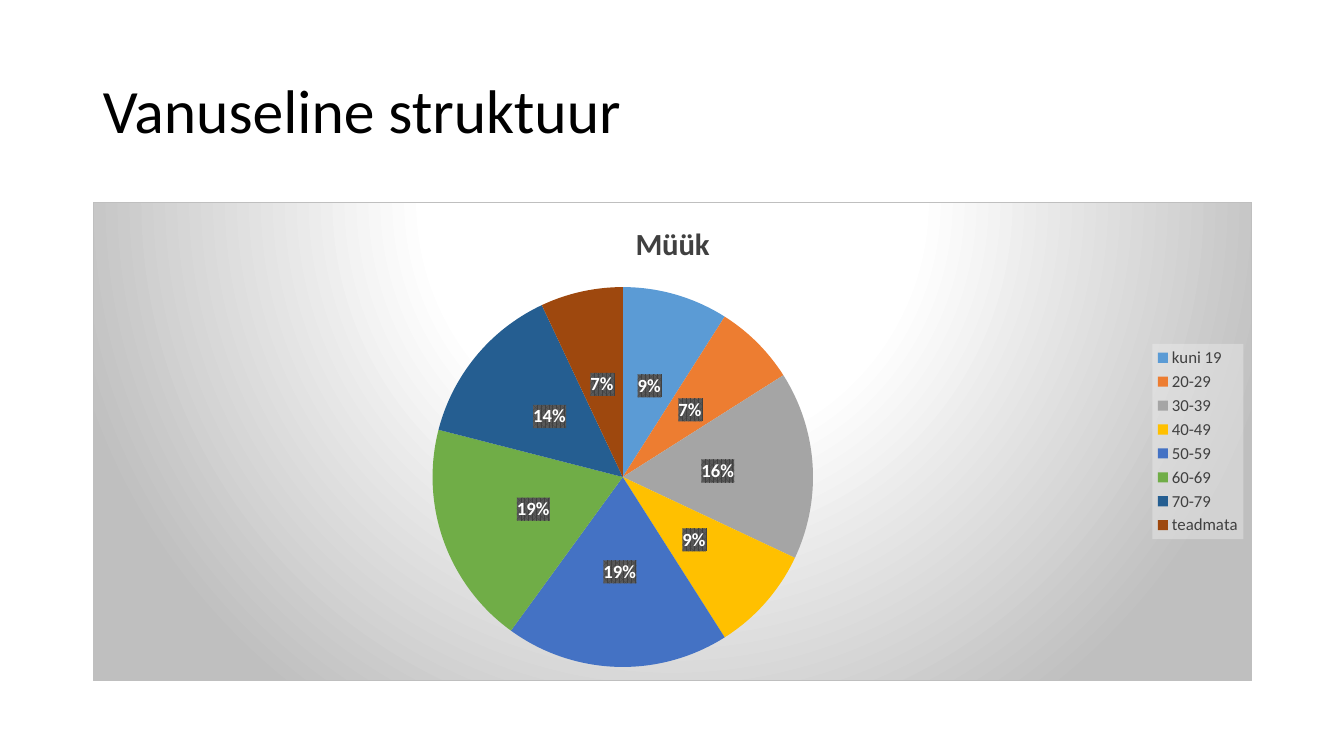
import pptx
import pptx.util
import pptx.chart.data
import pptx.dml.color
import pptx.enum.chart
import pptx.enum.text
import pptx.oxml

Inches, Pt = pptx.util.Inches, pptx.util.Pt
RGB = pptx.dml.color.RGBColor.from_string
FONT = "Calibri"
COLORS = {"title": "000000", "text": "404040", "label": "FFFFFF", "label_back": "595959",
          "legend_back": "F2F2F2", "center": "FFFFFF", "edge": "BFBFBF"}
AGE_GROUPS = [
    ("kuni 19", 9, "5B9BD5"), ("20-29", 7, "ED7D31"), ("30-39", 16, "A5A5A5"),
    ("40-49", 9, "FFC000"), ("50-59", 19, "4472C4"), ("60-69", 19, "70AD47"),
    ("70-79", 14, "255E91"), ("teadmata", 7, "9E480E"),
]


def set_font(font, size, color, bold=False):
    font.name, font.size, font.bold = FONT, Pt(size), bold
    font.color.rgb = RGB(COLORS[color])


def shape_properties(content):
    return pptx.oxml.parse_xml(
        '<c:spPr xmlns:c="http://schemas.openxmlformats.org/drawingml/2006/chart" '
        'xmlns:a="http://schemas.openxmlformats.org/drawingml/2006/main">'
        + content.format(**COLORS) + "</c:spPr>")


prs = pptx.Presentation()
prs.slide_width, prs.slide_height = Inches(13.33), Inches(7.5)
s = prs.slides.add_slide(prs.slide_layouts[5])

# Title
title = s.shapes.title
title.left, title.top, title.width, title.height = [Inches(v) for v in (0.92, 0.4, 11.5, 1.45)]
tf = title.text_frame
tf.text = "Vanuseline struktuur"
tf.vertical_anchor = pptx.enum.text.MSO_ANCHOR.MIDDLE
p = tf.paragraphs[0]
p.alignment = pptx.enum.text.PP_ALIGN.LEFT
p.line_spacing = 0.9
set_font(p.font, 44, "title")

# Pie chart
data = pptx.chart.data.ChartData()
data.categories = [name for name, share, color in AGE_GROUPS]
data.add_series("Müük", [share for name, share, color in AGE_GROUPS])
chart = s.shapes.add_chart(pptx.enum.chart.XL_CHART_TYPE.PIE, Inches(0.92), Inches(2),
                           Inches(11.5), Inches(4.76), data).chart
set_font(chart.font, 10, "title")
chart.has_title = True
chart.chart_title.include_in_layout = False
chart.chart_title.text_frame.text = "Müük"
set_font(chart.chart_title.text_frame.paragraphs[0].font, 22, "text", bold=True)

plot = chart.plots[0]
plot.vary_by_categories = True
for i, (name, share, color) in enumerate(AGE_GROUPS):
    fill = plot.series[0].points[i].format.fill
    fill.solid()
    fill.fore_color.rgb = RGB(color)

# Percent labels
labels = plot.series[0].data_labels
labels.show_percentage = True
labels.show_value = False
labels.show_legend_key = False
labels.number_format, labels.number_format_is_linked = "0%", False
labels.position = pptx.enum.chart.XL_LABEL_POSITION.CENTER
set_font(labels.font, 13.3, "label", bold=True)

# Legend
chart.has_legend = True
chart.legend.position = pptx.enum.chart.XL_LEGEND_POSITION.RIGHT
chart.legend.include_in_layout = False
set_font(chart.legend.font, 12, "text")

# Backgrounds of labels, legend and chart
chart.element.xpath(".//c:ser/c:dLbls/c:txPr")[0].addprevious(shape_properties(
    '<a:pattFill prst="pct75"><a:fgClr><a:srgbClr val="{text}"/></a:fgClr>'
    '<a:bgClr><a:srgbClr val="{label_back}"/></a:bgClr></a:pattFill>'))
chart.element.xpath(".//c:legend/c:txPr")[0].addprevious(shape_properties(
    '<a:solidFill><a:srgbClr val="{legend_back}"><a:alpha val="39000"/></a:srgbClr></a:solidFill>'))
chart.element.xpath("./c:chart")[0].addnext(shape_properties(
    '<a:gradFill><a:gsLst><a:gs pos="0"><a:srgbClr val="{center}"/></a:gs>'
    '<a:gs pos="39000"><a:srgbClr val="{center}"/></a:gs>'
    '<a:gs pos="100000"><a:srgbClr val="{edge}"/></a:gs></a:gsLst>'
    '<a:path path="circle"><a:fillToRect l="50000" t="-80000" r="50000" b="180000"/></a:path>'
    '</a:gradFill><a:ln w="9525"><a:solidFill><a:srgbClr val="{edge}"/></a:solidFill></a:ln>'))

prs.save("out.pptx")
